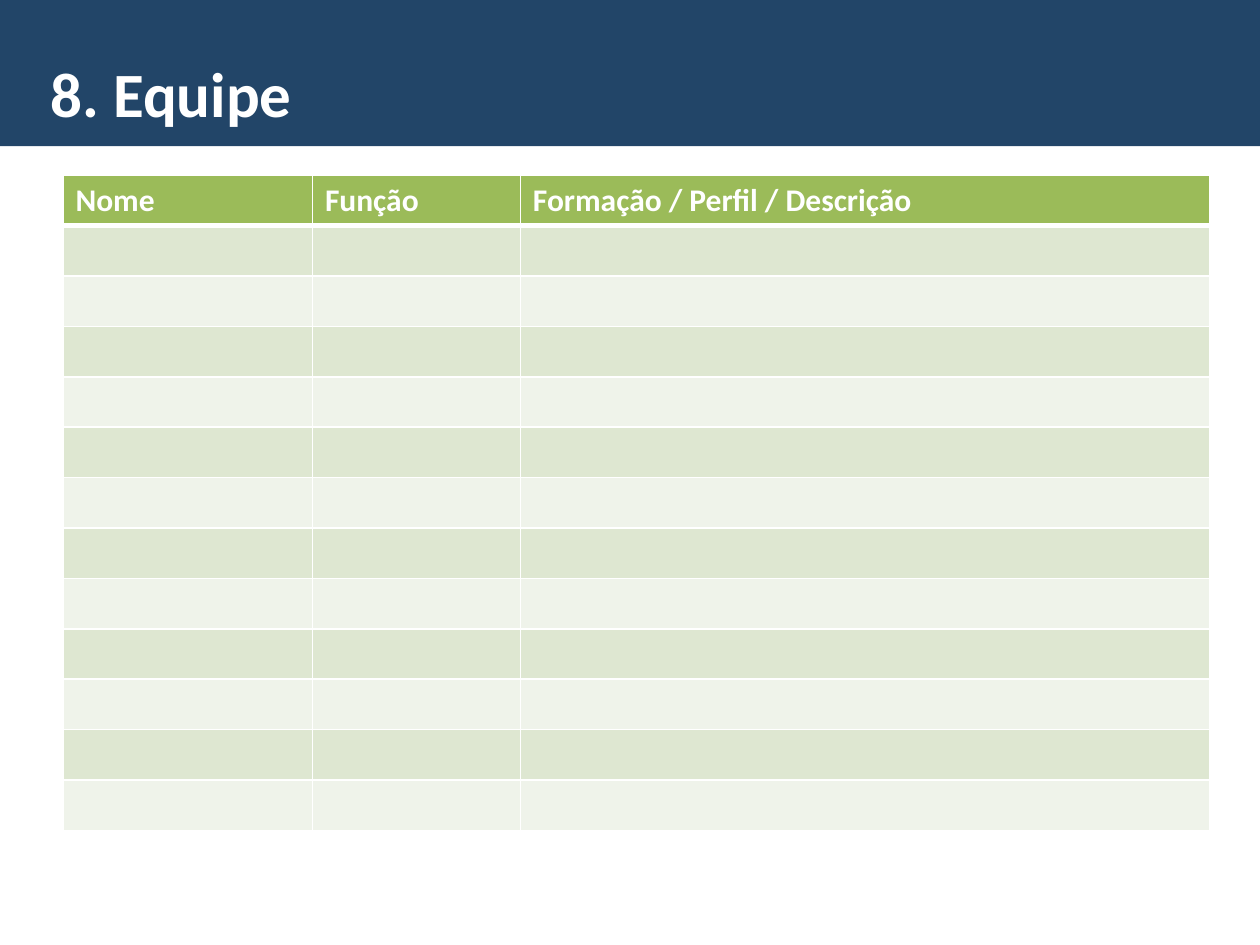
"""Build the team slide: a title band above an empty team table."""
from lxml import etree
from pptx import Presentation, util as u
from pptx.dml.color import RGBColor
from pptx.enum import shapes, text
from pptx.oxml.ns import qn

TITLE = "8. Equipe"
HEADINGS = ["Nome", "Função", "Formação / Perfil / Descrição"]
MEMBER_ROWS = 12
COLUMN_WIDTHS = [1.98, 1.65, 5.47]
ROW_HEIGHT = 0.4
COLORS = {"band": "224568", "header": "9BBB59", "odd": "DEE7D1",
          "even": "EFF3EA", "white": "FFFFFF"}


def paint(fill, color):
    fill.solid()
    fill.fore_color.rgb = RGBColor.from_string(COLORS[color])


def write(frame, words, size=18, color="white", bold=True):
    run = frame.paragraphs[0].add_run()
    run.text = words
    run.font.name, run.font.size, run.font.bold = "Calibri", u.Pt(size), bold
    run.font.color.rgb = RGBColor.from_string(COLORS[color])


def add_borders(cell, widths):
    properties = cell._tc.get_or_add_tcPr()
    for position, (side, width) in enumerate(widths.items()):
        line = etree.Element(qn(f"a:{side}"), w=str(u.Pt(width)))
        solid = etree.SubElement(line, qn("a:solidFill"))
        etree.SubElement(solid, qn("a:srgbClr"), val=COLORS["white"])
        properties.insert(position, line)


def add_title(slide, slide_width):
    band = slide.shapes.add_shape(shapes.MSO_SHAPE.RECTANGLE, 0, 0, slide_width, u.Inches(1.16))
    band.shadow.inherit = False
    paint(band.fill, "band")
    band.line.fill.background()
    title = slide.shapes.add_textbox(*map(u.Inches, (0.2, 0.36, 9.41, 0.55))).text_frame
    title.word_wrap = True
    title.vertical_anchor = text.MSO_ANCHOR.TOP
    title.margin_left, title.margin_top, title.margin_bottom = u.Inches(0.2), u.Inches(0.07), 0
    write(title, TITLE, size=36)


def add_team(slide):
    rows = MEMBER_ROWS + 1
    team = slide.shapes.add_table(
        rows, len(HEADINGS), u.Inches(0.5), u.Inches(1.39),
        u.Inches(sum(COLUMN_WIDTHS)), u.Inches(rows * ROW_HEIGHT)).table
    for column, width in zip(team.columns, COLUMN_WIDTHS):
        column.width = u.Inches(width)
    for index, row in enumerate(team.rows):
        row.height = u.Inches(ROW_HEIGHT)
        band = "header" if index == 0 else "odd" if index % 2 else "even"
        widths = {"lnL": 1, "lnR": 1, "lnT": 3 if index == 1 else 1,
                  "lnB": 3 if index == 0 else 1}
        for cell, heading in zip(row.cells, HEADINGS):
            cell.margin_top = cell.margin_bottom = u.Inches(0.04)
            cell.vertical_anchor = text.MSO_ANCHOR.MIDDLE
            paint(cell.fill, band)
            add_borders(cell, widths)
            if index == 0:
                write(cell.text_frame, heading)


def main():
    deck = Presentation()
    deck.slide_width, deck.slide_height = u.Inches(10), u.Inches(7.5)
    slide = deck.slides.add_slide(deck.slide_layouts[6])
    add_title(slide, deck.slide_width)
    add_team(slide)
    deck.save("out.pptx")


if __name__ == "__main__":
    main()
